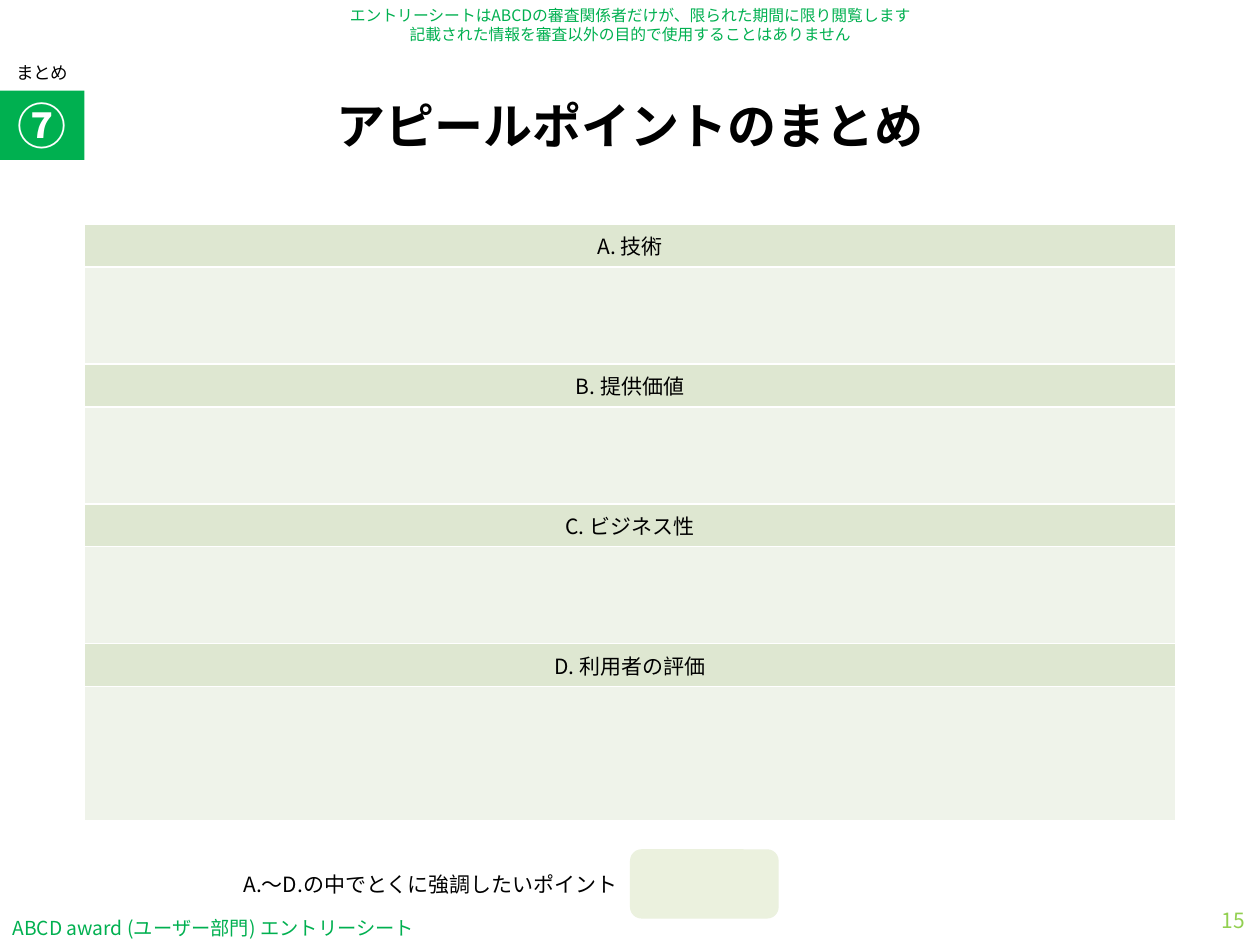
import pptx
import pptx.dml.color
import pptx.enum.shapes
import pptx.enum.text
import pptx.oxml.ns
import pptx.util
from lxml import etree
from pptx.util import Inches

RGBColor = pptx.dml.color.RGBColor
PP_ALIGN = pptx.enum.text.PP_ALIGN
MSO_ANCHOR = pptx.enum.text.MSO_ANCHOR
MSO_SHAPE = pptx.enum.shapes.MSO_SHAPE

FONT = "Noto Sans CJK JP"
BLACK = RGBColor(0x00, 0x00, 0x00)
WHITE = RGBColor(0xFF, 0xFF, 0xFF)
GREEN = RGBColor(0x00, 0xB0, 0x50)
LIGHT_GREEN = RGBColor(0x92, 0xD0, 0x50)
HEADING_FILL = RGBColor(0xDE, 0xE7, 0xD1)
ANSWER_FILL = RGBColor(0xEF, 0xF3, 0xEA)
CHOICE_FILL = RGBColor(0xEB, 0xF1, 0xDE)

HEADINGS = ["A. 技術", "B. 提供価値", "C. ビジネス性", "D. 利用者の評価"]
HEADING_HEIGHT = 0.34
ANSWER_HEIGHTS = [0.77, 0.77, 0.77, 1.07]


def write_text(frame, text, size, color, align, bold=False):
    paragraph = frame.paragraphs[0]
    paragraph.text = text
    paragraph.alignment = align
    font = paragraph.font
    font.size = pptx.util.Pt(size)
    font.bold = bold
    font.color.rgb = color
    font.name = FONT
    # East Asian text takes its typeface from a:ea
    latin = paragraph._p.find(".//" + pptx.oxml.ns.qn("a:latin"))
    east_asian = etree.Element(pptx.oxml.ns.qn("a:ea"), typeface=FONT)
    latin.addnext(east_asian)


def add_text(slide, box, text, size, color, align=PP_ALIGN.CENTER,
             anchor=MSO_ANCHOR.MIDDLE, bold=False):
    frame = slide.shapes.add_textbox(*map(Inches, box)).text_frame
    frame.word_wrap = True
    frame.vertical_anchor = anchor
    write_text(frame, text, size, color, align, bold)


def add_filled_shape(slide, kind, box, fill):
    shape = slide.shapes.add_shape(kind, *map(Inches, box))
    shape.shadow.inherit = False
    shape.fill.solid()
    shape.fill.fore_color.rgb = fill
    shape.line.fill.background()
    return shape


def fill_cell(cell, color):
    cell.fill.solid()
    cell.fill.fore_color.rgb = color


def add_appeal_table(slide):
    """Alternate a heading row with an empty answer row."""
    height = HEADING_HEIGHT * len(HEADINGS) + sum(ANSWER_HEIGHTS)
    table = slide.shapes.add_table(
        2 * len(HEADINGS), 1, Inches(0.67), Inches(1.78), Inches(8.66), Inches(height)
    ).table
    table.first_row = False
    for index, (heading, answer_height) in enumerate(zip(HEADINGS, ANSWER_HEIGHTS)):
        heading_row, answer_row = 2 * index, 2 * index + 1
        table.rows[heading_row].height = Inches(HEADING_HEIGHT)
        table.rows[answer_row].height = Inches(answer_height)
        cell = table.cell(heading_row, 0)
        cell.vertical_anchor = MSO_ANCHOR.MIDDLE
        fill_cell(cell, HEADING_FILL)
        write_text(cell.text_frame, heading, 12, BLACK, PP_ALIGN.CENTER)
        fill_cell(table.cell(answer_row, 0), ANSWER_FILL)


def add_section_badge(slide):
    badge = add_filled_shape(slide, MSO_SHAPE.RECTANGLE, (0, 0.72, 0.67, 0.55), GREEN)
    badge.text_frame.vertical_anchor = MSO_ANCHOR.MIDDLE
    write_text(badge.text_frame, "⑦", 28, WHITE, PP_ALIGN.CENTER, bold=True)
    add_text(slide, (0, 0.44, 0.67, 0.21), "まとめ", 10, BLACK, anchor=MSO_ANCHOR.TOP)


def main():
    presentation = pptx.Presentation()
    presentation.slide_width = Inches(10)
    presentation.slide_height = Inches(7.5)
    slide = presentation.slides.add_slide(presentation.slide_layouts[6])

    add_text(slide, (0, 7.23, 3.7, 0.27), "ABCD award (ユーザー部門) エントリーシート",
             11, GREEN, align=PP_ALIGN.LEFT)
    add_text(slide, (2.5, 0, 5, 0.39),
             "エントリーシートはABCDの審査関係者だけが、限られた期間に限り閲覧します\n"
             "記載された情報を審査以外の目的で使用することはありません",
             9, GREEN, anchor=MSO_ANCHOR.TOP)
    add_text(slide, (1.06, 0.6, 7.88, 0.79), "アピールポイントのまとめ", 28, BLACK, bold=True)
    add_appeal_table(slide)
    add_text(slide, (1.5, 6.82, 3.5, 0.39), "A.～D.の中でとくに強調したいポイント",
             12, BLACK, align=PP_ALIGN.RIGHT)
    add_filled_shape(slide, MSO_SHAPE.ROUNDED_RECTANGLE, (5, 6.74, 1.18, 0.55), CHOICE_FILL)
    add_text(slide, (9.25, 7.1, 0.73, 0.4), "15", 12, LIGHT_GREEN, align=PP_ALIGN.RIGHT)
    add_section_badge(slide)

    presentation.save("out.pptx")


if __name__ == "__main__":
    main()
